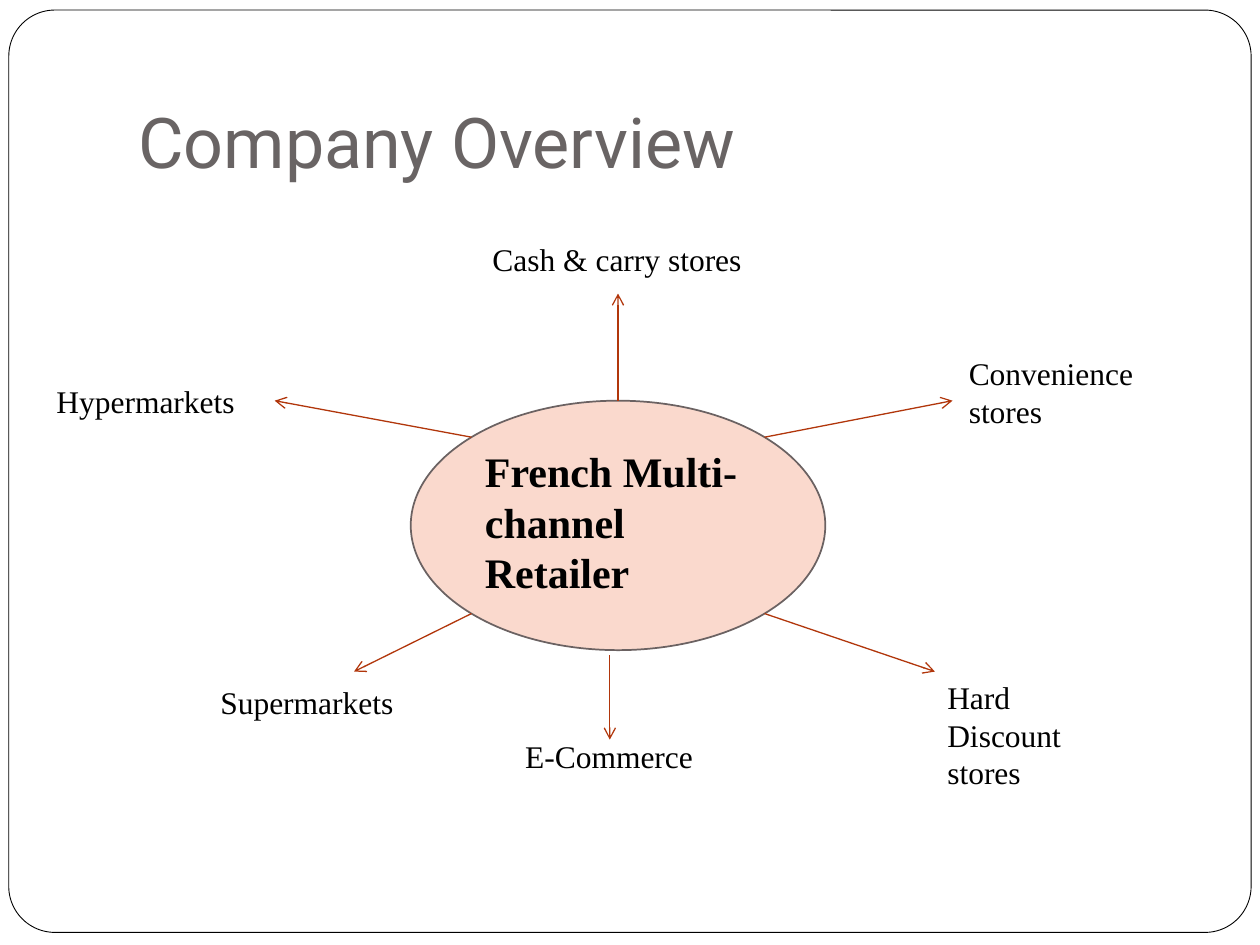
from math import cos, radians, sin

from lxml.etree import SubElement
from pptx import Presentation
from pptx.dml.color import RGBColor
from pptx.enum.shapes import MSO_CONNECTOR, MSO_SHAPE
from pptx.enum.text import MSO_ANCHOR
from pptx.oxml.ns import qn
from pptx.util import Inches, Pt

BLACK = RGBColor(0x00, 0x00, 0x00)
WHITE = RGBColor(0xFF, 0xFF, 0xFF)
TITLE_GREY = RGBColor(0x69, 0x64, 0x64)
HUB_FILL = RGBColor(0xFA, 0xD9, 0xCD)
HUB_LINE = RGBColor(0x6B, 0x62, 0x62)
ARROW_RUST = RGBColor(0xB1, 0x36, 0x0B)

COLUMNS, ROWS = 100, 75
CELL = Inches(10) // COLUMNS

HUB_CENTRE = (49.05, 41.7)
HUB_RADII = (16.45, 9.9)

CHANNELS = [
    ("Hypermarkets", (3.5, 29.8, 18.3, 4.3)),
    ("Cash & carry stores", (38.1, 18.6, 22.8, 4.3)),
    ("Convenience stores", (75.9, 27.6, 16.8, 6.1)),
    ("Supermarkets", (16.5, 53.7, 18.2, 3.5)),
    ("Hard Discount stores", (74.2, 53.3, 14, 10.8)),
    ("E-Commerce", (40.7, 58, 17.7, 4.3)),
]

ARROW_TIPS = [
    (225, (21.8, 31.8)),
    (315, (75.6, 31.8)),
    (270, (49.05, 23.3)),
    (135, (28.1, 53.3)),
    (45, (74.2, 53.3)),
]


def grid(*cells):
    """Turn columns and rows of the grid into slide lengths."""
    return [round(cell * CELL) for cell in cells]


def add_text(slide, text, box, size=18, font="Times New Roman", color=BLACK,
             bold=False, anchor=MSO_ANCHOR.TOP, bottom=0.05):
    """Add a wrapped text box in the given format."""
    frame = slide.shapes.add_textbox(*grid(*box)).text_frame
    frame.word_wrap = True
    frame.vertical_anchor = anchor
    frame.margin_bottom = Inches(bottom)
    run = frame.paragraphs[0].add_run()
    run.text = text
    run.font.size = Pt(size)
    run.font.name = font
    run.font.color.rgb = color
    run.font.bold = bold


def add_outline(slide, preset, box, fill, line, width):
    """Add a filled and outlined preset shape."""
    outline = slide.shapes.add_shape(preset, *grid(*box))
    outline.shadow.inherit = False
    outline.fill.solid()
    outline.fill.fore_color.rgb = fill
    outline.line.color.rgb = line
    outline.line.width = Pt(width)
    return outline


def add_arrow(slide, start, tip):
    """Add a thin line with an open arrowhead at its tip."""
    arrow = slide.shapes.add_connector(
        MSO_CONNECTOR.STRAIGHT, *grid(*start, *tip))
    arrow.line.color.rgb = ARROW_RUST
    arrow.line.width = Pt(0.75)
    SubElement(arrow.line._get_or_add_ln(), qn("a:tailEnd"), type="arrow")
    SubElement(arrow._element.spPr, qn("a:effectLst"))


def hub_edge(degrees):
    """Find the point on the hub's ellipse at a clockwise angle."""
    angle = radians(degrees)
    return (HUB_CENTRE[0] + HUB_RADII[0] * cos(angle),
            HUB_CENTRE[1] + HUB_RADII[1] * sin(angle))


def add_hub(slide):
    """Add the central ellipse and its caption."""
    corner = [c - r for c, r in zip(HUB_CENTRE, HUB_RADII)]
    size = [2 * r for r in HUB_RADII]
    add_outline(slide, MSO_SHAPE.OVAL, (*corner, *size), HUB_FILL, HUB_LINE, 1)
    add_text(slide, "French Multi-channel Retailer", (37.5, 34.9, 23.1, 14.1),
             size=24, bold=True)


def main():
    """Build the company overview slide."""
    deck = Presentation()
    deck.slide_width, deck.slide_height = grid(COLUMNS, ROWS)
    slide = deck.slides.add_slide(deck.slide_layouts[6])

    border = add_outline(slide, MSO_SHAPE.ROUNDED_RECTANGLE,
                         (0.7, 0.8, 98.6, 73.2), WHITE, BLACK, 0.5)
    border.adjustments[0] = 0.05
    add_text(slide, "Company Overview", (10, 3, 85, 12.5), size=40,
             font="Roboto", color=TITLE_GREY, anchor=MSO_ANCHOR.BOTTOM,
             bottom=0.1)

    add_hub(slide)
    for degrees, tip in ARROW_TIPS:
        add_arrow(slide, hub_edge(degrees), tip)
    for channel, box in CHANNELS:
        add_text(slide, channel, box)
    add_arrow(slide, (48.4, 52), (48.4, 58.7))

    deck.save("out.pptx")


if __name__ == "__main__":
    main()
